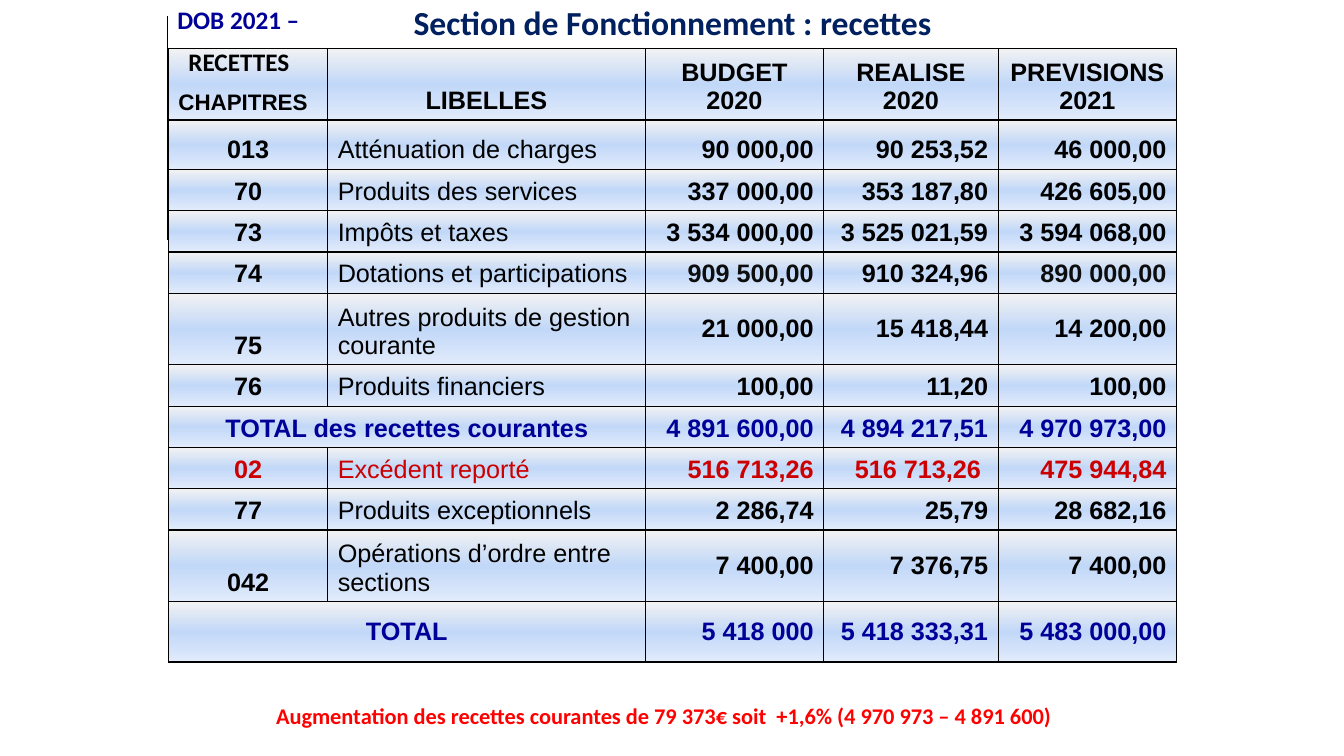
"""Builds the slide of operating revenue by budget chapter."""
from lxml.etree import SubElement
from pptx import Presentation
from pptx.dml.color import RGBColor
from pptx.enum.shapes import MSO_CONNECTOR
from pptx.enum.text import MSO_ANCHOR, PP_ALIGN
from pptx.oxml.ns import qn
from pptx.util import Inches, Pt

BLACK = RGBColor(0x00, 0x00, 0x00)
NEAR_BLACK = RGBColor(0x0D, 0x0D, 0x0D)
BLUE = RGBColor(0x00, 0x00, 0x99)
NAVY = RGBColor(0x00, 0x20, 0x60)
DARK_RED = RGBColor(0xCC, 0x00, 0x00)
RED = RGBColor(0xFF, 0x00, 0x00)
GRADIENT = [(0, "F2F2F2"), (50, "C2D8F8"), (100, "E1EBFB")]

TITLE = "Section de Fonctionnement : recettes"
DEBATE = "DOB 2021 –"
CORNER = "RECETTES"
NOTE = "Augmentation des recettes courantes de 79 373€ soit  +1,6% (4 970 973 – 4 891 600)"
HEADER = ["CHAPITRES", "LIBELLES", "BUDGET 2020", "REALISE 2020", "PREVISIONS 2021"]
REVENUES = [
    ["013", "Atténuation de charges", "90 000,00", "90 253,52", "46 000,00"],
    ["70", "Produits des services", "337 000,00", "353 187,80", "426 605,00"],
    ["73", "Impôts et taxes", "3 534 000,00", "3 525 021,59", "3 594 068,00"],
    ["74", "Dotations et participations", "909 500,00", "910 324,96", "890 000,00"],
    ["75", "Autres produits de gestion courante", "21 000,00", "15 418,44", "14 200,00"],
    ["76", "Produits financiers", "100,00", "11,20", "100,00"],
    ["TOTAL des recettes courantes", "", "4 891 600,00", "4 894 217,51", "4 970 973,00"],
    ["02", "Excédent reporté", "516 713,26", "516 713,26 ", "475 944,84"],
    ["77", "Produits exceptionnels", "2 286,74", "25,79", "28 682,16"],
    ["042", "Opérations d’ordre entre sections", "7 400,00", "7 376,75", "7 400,00"],
    ["TOTAL", "", "5 418 000", "5 418 333,31", "5 483 000,00"],
]
COLUMN_WIDTHS = [1.58, 3.15, 1.77, 1.73, 1.77]
ROW_HEIGHT = 0.41
TALL_ROWS = {0: 0.71, 1: 0.49, 5: 0.71, 10: 0.71, 11: 0.6}
MIDDLE_ROWS = (5, 10, 11)
TOTAL_ROWS = (7, 11)
CARRIED_ROW = 8
NEAR_BLACK_CELLS = [(4, 2), (4, 4)]


def style(paragraph, font_name, size, color, bold=True, align=PP_ALIGN.LEFT):
    paragraph.alignment = align
    for run in paragraph.runs:
        run.font.name = font_name
        run.font.size = Pt(size)
        run.font.bold = bold
        run.font.color.rgb = color


def add_text(slide, box, lines, size, color, align=PP_ALIGN.LEFT):
    frame = slide.shapes.add_textbox(*map(Inches, box)).text_frame
    frame.word_wrap = True
    frame.text = "\n".join(lines)
    for paragraph in frame.paragraphs:
        style(paragraph, "Calibri", size, color, align=align)
    return frame


def add_color(parent, value):
    SubElement(parent, qn("a:srgbClr"), val=value)


def paint_cell(cell):
    properties = cell._tc.get_or_add_tcPr()
    for side in ("a:lnL", "a:lnR", "a:lnT", "a:lnB"):
        border = SubElement(properties, qn(side), w=str(Pt(1)))
        add_color(SubElement(border, qn("a:solidFill")), str(BLACK))
    fill = SubElement(properties, qn("a:gradFill"), rotWithShape="1")
    stops = SubElement(fill, qn("a:gsLst"))
    for percent, value in GRADIENT:
        add_color(SubElement(stops, qn("a:gs"), pos=str(percent * 1000)), value)
    SubElement(fill, qn("a:lin"), ang="5400000", scaled="0")


def cell_color(row, column):
    if row in TOTAL_ROWS:
        return BLUE
    if row == CARRIED_ROW:
        return DARK_RED
    return NEAR_BLACK if (row, column) in NEAR_BLACK_CELLS else BLACK


def cell_align(row, column):
    if row == 0:
        return PP_ALIGN.CENTER if column else PP_ALIGN.LEFT
    return (PP_ALIGN.CENTER, PP_ALIGN.LEFT)[column] if column < 2 else PP_ALIGN.RIGHT


def is_middle(row, column):
    return row in MIDDLE_ROWS and (column >= 2 or row in TOTAL_ROWS)


def add_revenue_table(slide):
    rows = [HEADER] + REVENUES
    heights = [TALL_ROWS.get(row, ROW_HEIGHT) for row in range(len(rows))]
    table = slide.shapes.add_table(
        len(rows), len(HEADER), Inches(1.67), Inches(0.48),
        Inches(sum(COLUMN_WIDTHS)), Inches(sum(heights))).table
    for column, width in enumerate(COLUMN_WIDTHS):
        table.columns[column].width = Inches(width)
    for row, texts in enumerate(rows):
        table.rows[row].height = Inches(heights[row])
        for column, text in enumerate(texts):
            cell = table.cell(row, column)
            cell.text = text
            cell.vertical_anchor = MSO_ANCHOR.MIDDLE if is_middle(row, column) else MSO_ANCHOR.BOTTOM
            style(cell.text_frame.paragraphs[0], "Arial", 16 if row == column == 0 else 18,
                  cell_color(row, column), bold=row == 0 or column != 1,
                  align=cell_align(row, column))
            paint_cell(cell)
    for row in TOTAL_ROWS:
        table.cell(row, 0).merge(table.cell(row, 1))


def main():
    presentation = Presentation()
    presentation.slide_width, presentation.slide_height = Inches(13.33), Inches(7.5)
    slide = presentation.slides.add_slide(presentation.slide_layouts[6])

    add_text(slide, (1.67, 6.92, 9.83, 0.4), [NOTE], 16, RED, PP_ALIGN.CENTER)
    add_revenue_table(slide)

    corner = add_text(slide, (1.66, -0.01, 3.11, 0.86), [DEBATE, CORNER], 18, BLUE).paragraphs[1]
    corner.space_before = Pt(9)
    corner.runs[0].font.color.rgb = BLACK
    corner._p.get_or_add_pPr().set("marL", str(Inches(0.11)))

    rule = slide.shapes.add_connector(
        MSO_CONNECTOR.STRAIGHT, Inches(1.66), Inches(0.16), Inches(1.66), Inches(2.38))
    rule.line.color.rgb = BLACK
    rule.line.width = Pt(1)
    SubElement(rule._element.spPr, qn("a:effectLst"))

    add_text(slide, (2.66, -0.03, 8.02, 0.5), [TITLE], 24, NAVY, PP_ALIGN.CENTER)
    presentation.save("out.pptx")


if __name__ == "__main__":
    main()
